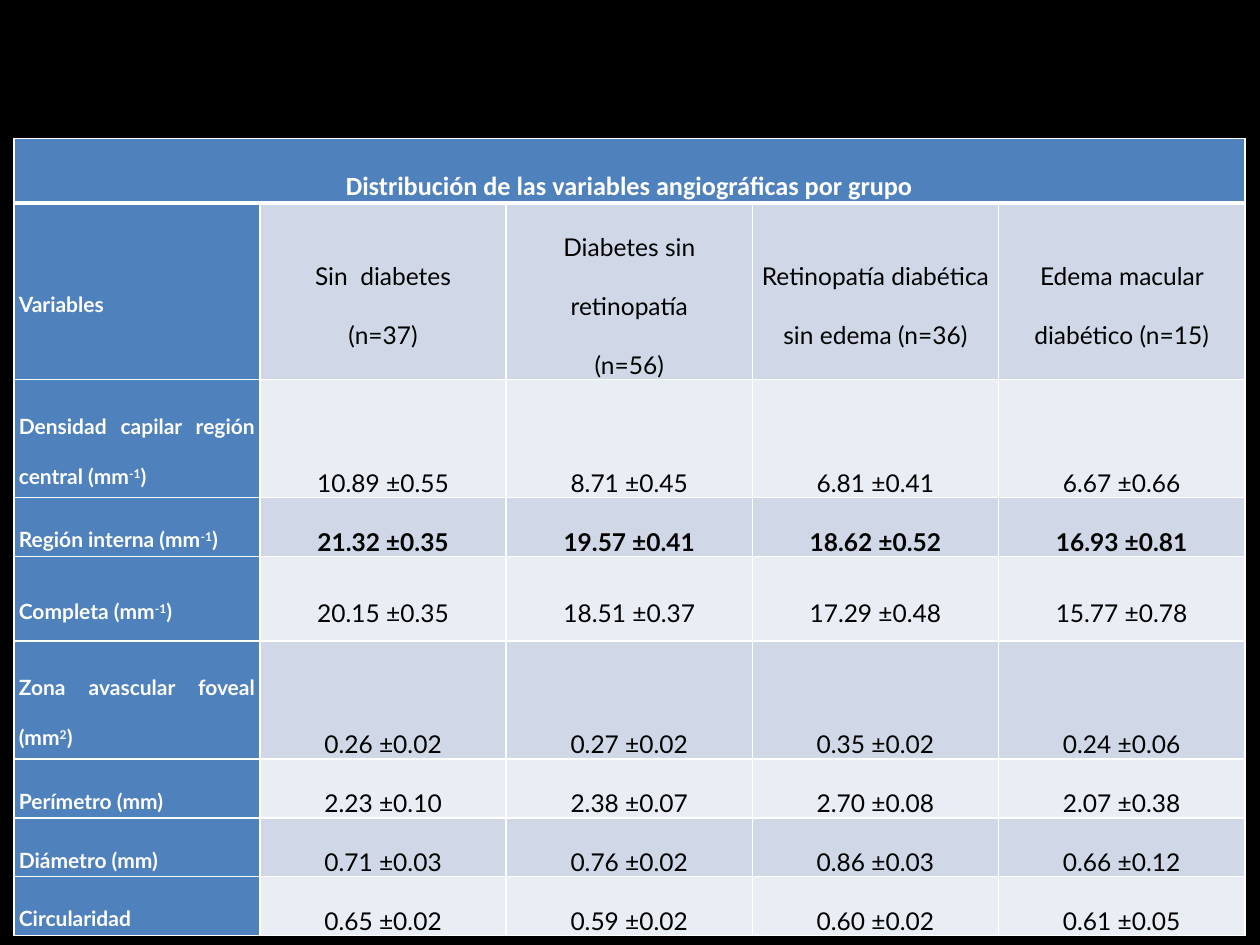
from lxml.etree import SubElement
from pptx import Presentation
from pptx.dml.color import RGBColor
from pptx.enum.text import MSO_ANCHOR, PP_ALIGN
from pptx.oxml.ns import qn
from pptx.util import Inches, Pt

BLACK = RGBColor(0x00, 0x00, 0x00)
WHITE = RGBColor(0xFF, 0xFF, 0xFF)
BLUE = RGBColor(0x4F, 0x81, 0xBD)
BAND_DARK = RGBColor(0xD0, 0xD8, 0xE8)
BAND_LIGHT = RGBColor(0xE9, 0xED, 0xF4)

TITLE = "Distribución de las variables angiográficas por grupo"
GROUPS = [
    ["Sin  diabetes", "(n=37)"],
    ["Diabetes sin retinopatía", "(n=56)"],
    ["Retinopatía diabética sin edema (n=36)"],
    ["Edema macular diabético (n=15)"],
]
# Label, exponent of its unit, values by group
VARIABLES = [
    ("Densidad capilar región central (mm", "-1",
     ["10.89 ±0.55", "8.71 ±0.45", "6.81 ±0.41", "6.67 ±0.66"]),
    ("Región interna (mm", "-1",
     ["21.32 ±0.35", "19.57 ±0.41", "18.62 ±0.52", "16.93 ±0.81"]),
    ("Completa (mm", "-1",
     ["20.15 ±0.35", "18.51 ±0.37", "17.29 ±0.48", "15.77 ±0.78"]),
    ("Zona avascular foveal (mm", "2",
     ["0.26 ±0.02", "0.27 ±0.02", "0.35 ±0.02", "0.24 ±0.06"]),
    ("Perímetro (mm)", "", ["2.23 ±0.10", "2.38 ±0.07", "2.70 ±0.08", "2.07 ±0.38"]),
    ("Diámetro (mm)", "", ["0.71 ±0.03", "0.76 ±0.02", "0.86 ±0.03", "0.66 ±0.12"]),
    ("Circularidad", "", ["0.65 ±0.02", "0.59 ±0.02", "0.60 ±0.02", "0.61 ±0.05"]),
]
ROW_HEIGHTS = [0.43, 0.86, 0.84, 0.39, 0.67, 0.84, 0.39, 0.39, 0.39]
TALL_ROW = 0.84
VALUE_DROP = 0.47  # one double-spaced line, which lowers values in tall rows
BOLD_VARIABLE = "Región interna (mm"


def set_borders(cell, top=1, bottom=1):
    """Draw white borders; must run before the cell is filled."""
    tc_pr = cell._tc.get_or_add_tcPr()
    for side, width in (("L", 1), ("R", 1), ("T", top), ("B", bottom)):
        ln = SubElement(tc_pr, qn(f"a:ln{side}"), w=str(Pt(width)))
        fill = SubElement(ln, qn("a:solidFill"))
        SubElement(fill, qn("a:srgbClr"), val=str(WHITE))


def style_cell(cell, color, top=1, bottom=1):
    set_borders(cell, top, bottom)
    cell.fill.solid()
    cell.fill.fore_color.rgb = color
    cell.vertical_anchor = MSO_ANCHOR.MIDDLE
    cell.margin_left = cell.margin_right = Inches(0.04)
    cell.margin_top = cell.margin_bottom = 0


def add_run(p, text, size, color, bold, font="Lato"):
    r = p.add_run()
    r.text = text
    r.font.size = Pt(size)
    r.font.name = font
    r.font.bold = bold
    r.font.color.rgb = color
    return r


def format_paragraph(p, alignment):
    p.alignment = alignment
    p.line_spacing = 2.0
    return p


def write_label(cell, text, exponent=""):
    p = format_paragraph(cell.text_frame.paragraphs[0], PP_ALIGN.JUSTIFY)
    add_run(p, text, 12, WHITE, True)
    if exponent:
        r = add_run(p, exponent, 12, WHITE, True)
        r.font._element.set("baseline", "30000")
        add_run(p, ")", 12, WHITE, True)


def write_lines(cell, lines, bold=False):
    tf = cell.text_frame
    for i, line in enumerate(lines):
        p = tf.add_paragraph() if i else tf.paragraphs[0]
        format_paragraph(p, PP_ALIGN.CENTER)
        add_run(p, line, 14, BLACK, bold)


def fill_title_row(table):
    for cell in table.rows[0].cells:
        style_cell(cell, BLUE, bottom=3)
    title = table.cell(0, 0)
    title.merge(table.cell(0, len(GROUPS)))
    p = format_paragraph(title.text_frame.paragraphs[0], PP_ALIGN.CENTER)
    add_run(p, TITLE, 15, WHITE, True, "Calibri")


def fill_group_row(table):
    label, *groups = table.rows[1].cells
    style_cell(label, BLUE, top=3)
    write_label(label, "Variables")
    for cell, lines in zip(groups, GROUPS):
        style_cell(cell, BAND_DARK, top=3)
        write_lines(cell, lines)


def fill_variable_row(table, row, name, exponent, values):
    label, *cells = table.rows[row].cells
    style_cell(label, BLUE)
    write_label(label, name, exponent)
    for cell, value in zip(cells, values):
        style_cell(cell, BAND_DARK if row % 2 else BAND_LIGHT)
        if ROW_HEIGHTS[row] == TALL_ROW:
            cell.margin_top = Inches(VALUE_DROP)
        write_lines(cell, [value], bold=name == BOLD_VARIABLE)


def add_variables_table(s, left, top, width):
    columns = len(GROUPS) + 1
    table = s.shapes.add_table(len(ROW_HEIGHTS), columns, left, top, width,
                               Inches(sum(ROW_HEIGHTS))).table
    for row, height in zip(table.rows, ROW_HEIGHTS):
        row.height = Inches(height)
    fill_title_row(table)
    fill_group_row(table)
    for row, variable in enumerate(VARIABLES, start=2):
        fill_variable_row(table, row, *variable)


def main():
    prs = Presentation()
    prs.slide_width, prs.slide_height = Inches(10), Inches(7.5)
    s = prs.slides.add_slide(prs.slide_layouts[6])
    s.background.fill.solid()
    s.background.fill.fore_color.rgb = BLACK
    add_variables_table(s, Inches(0.11), Inches(1.1), Inches(9.77))
    prs.save("out.pptx")


if __name__ == "__main__":
    main()
